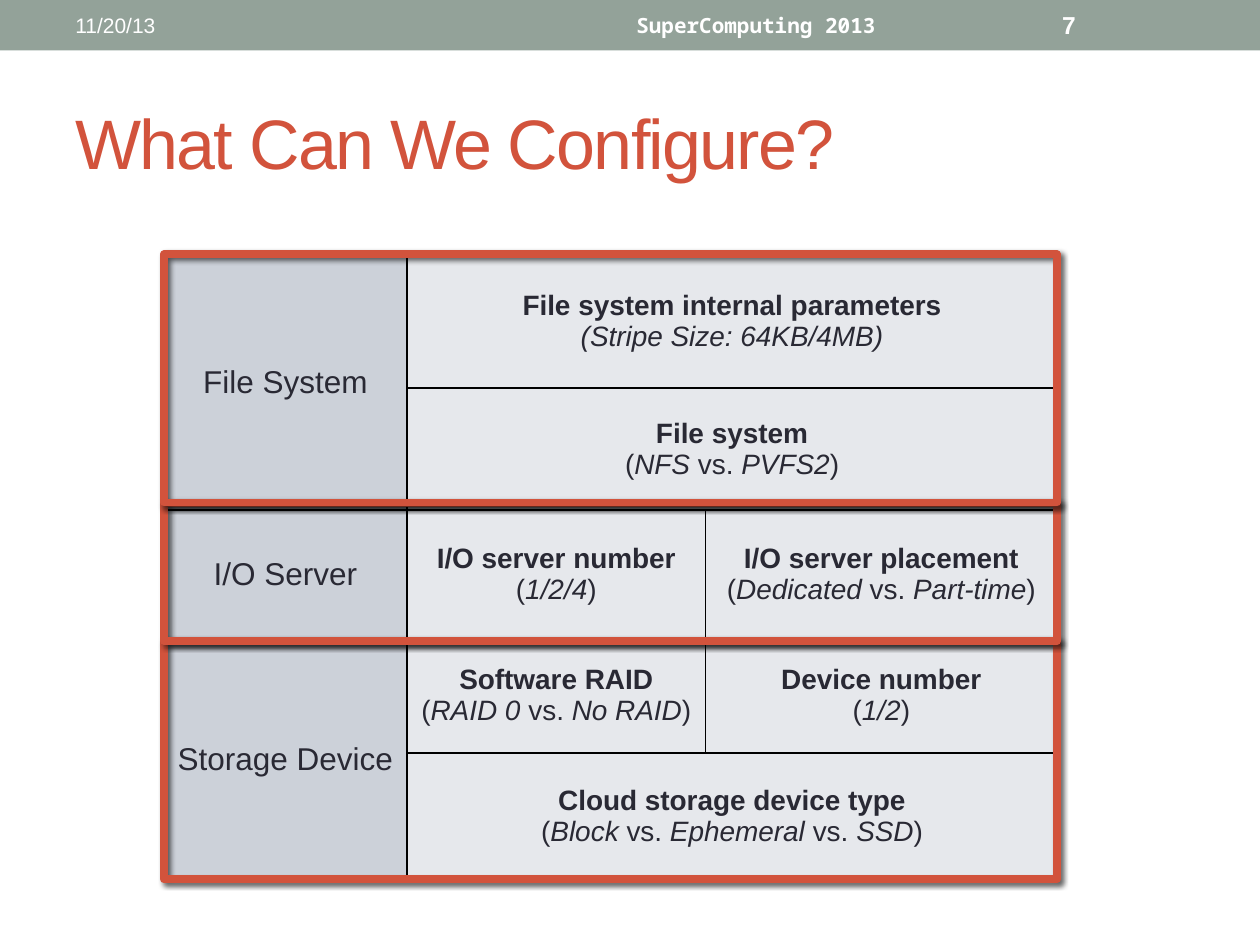
from dataclasses import dataclass
from itertools import accumulate

from lxml import etree
from pptx import Presentation
from pptx import util as u
from pptx.dml.color import RGBColor
from pptx.enum import shapes, text
from pptx.oxml import ns

Pt = u.Pt


@dataclass(frozen=True)
class Theme:
    sans: str = "Arial"
    mono: str = "Noto Sans Mono"
    bar: str = "93A299"
    accent: str = "D2533C"
    ink: str = "292934"
    white: str = "FFFFFF"
    rule: str = "000000"
    label_fill: str = "CCD1D9"
    option_fill: str = "E6E8EC"
    title_size: int = 40
    label_size: int = 18
    option_size: int = 16
    number_size: int = 14
    header_size: int = 12


T = Theme()
LEFT, TOP = 93.6, 145.4
COLS = [139, 170.6, 200.9]
ROWS = [76.3, 69.8, 73.4, 65.5, 72.7]
FRAME_HEIGHTS = [141.8, 79.2, 136.1]


def rgb(value):
    return RGBColor.from_string(value)


def add_run(p, content, size, color, font=T.sans, bold=False, italic=False):
    r = p.add_run()
    r.text = content
    r.font.name, r.font.size = font, Pt(size)
    r.font.bold, r.font.italic = bold, italic
    r.font.color.rgb = rgb(color)
    return r


def add_text(s, box, content, size, color, align=text.PP_ALIGN.LEFT, **style):
    tf = s.shapes.add_textbox(*map(Pt, box)).text_frame
    tf.word_wrap = True
    tf.vertical_anchor = text.MSO_ANCHOR.MIDDLE
    p = tf.paragraphs[0]
    p.alignment = align
    return add_run(p, content, size, color, **style)


def add_bar(s, width, height):
    sp = s.shapes.add_shape(shapes.MSO_SHAPE.RECTANGLE, 0, 0, Pt(width), Pt(height))
    sp.shadow.inherit = False
    sp.fill.solid()
    sp.fill.fore_color.rgb = rgb(T.bar)
    sp.line.fill.background()


def add_frame(s, top, height):
    sp = s.shapes.add_shape(shapes.MSO_SHAPE.RECTANGLE,
                            Pt(LEFT), Pt(top), Pt(sum(COLS)), Pt(height))
    sp.fill.background()
    sp.line.color.rgb = rgb(T.accent)
    sp.line.width = Pt(4.5)
    etree.SubElement(sp.line._get_or_add_ln(), ns.qn("a:round"))
    sp.shadow.inherit = False
    effects = sp._element.spPr.find(ns.qn("a:effectLst"))
    shadow = etree.SubElement(effects, ns.qn("a:outerShdw"), blurRad=str(Pt(3)),
                              dist=str(Pt(2)), dir="2700000", rotWithShape="0")
    color = etree.SubElement(shadow, ns.qn("a:srgbClr"), val=T.rule)
    etree.SubElement(color, ns.qn("a:alpha"), val="60000")


def add_borders(cell):
    tc_pr = cell._tc.get_or_add_tcPr()
    for i, side in enumerate(("lnL", "lnR", "lnT", "lnB")):
        ln = etree.Element(ns.qn("a:" + side), w=str(Pt(1)))
        fill = etree.SubElement(ln, ns.qn("a:solidFill"))
        etree.SubElement(fill, ns.qn("a:srgbClr"), val=T.rule)
        tc_pr.insert(i, ln)


def choices(*names):
    runs = [("(", False)]
    for i, name in enumerate(names):
        if i:
            runs.append((" vs. ", False))
        runs.append((name, True))
    return runs + [(")", False)]


def fill_label(cell, content):
    p = cell.text_frame.paragraphs[0]
    p.alignment = text.PP_ALIGN.CENTER
    add_run(p, content, T.label_size, T.ink)


def fill_option(cell, heading, detail):
    tf = cell.text_frame
    p = tf.paragraphs[0]
    add_run(p, heading, T.option_size, T.ink, bold=True)
    p.alignment = text.PP_ALIGN.CENTER
    p = tf.add_paragraph()
    p.alignment = text.PP_ALIGN.CENTER
    for content, italic in detail:
        add_run(p, content, T.option_size, T.ink, italic=italic)


def add_config_table(s, labels, options):
    table = s.shapes.add_table(len(ROWS), len(COLS), Pt(LEFT), Pt(TOP),
                               Pt(sum(COLS)), Pt(sum(ROWS))).table
    table.first_row = table.horz_banding = False
    for column, width in zip(table.columns, COLS):
        column.width = Pt(width)
    for row, height in zip(table.rows, ROWS):
        row.height = Pt(height)
        for i, cell in enumerate(row.cells):
            cell.fill.solid()
            cell.fill.fore_color.rgb = rgb(T.option_fill if i else T.label_fill)
            cell.vertical_anchor = text.MSO_ANCHOR.MIDDLE
            add_borders(cell)
    for first, last, label in labels:
        cell = table.cell(first, 0)
        if last > first:
            cell.merge(table.cell(last, 0))
        fill_label(cell, label)
    for r, row_options in enumerate(options):
        if len(row_options) == 1:
            table.cell(r, 1).merge(table.cell(r, 2))
        for c, option in enumerate(row_options, 1):
            fill_option(table.cell(r, c), *option)


def main():
    prs = Presentation()
    prs.slide_width, prs.slide_height = Pt(720), Pt(540)
    s = prs.slides.add_slide(prs.slide_layouts[6])

    add_bar(s, 720, 28.8)
    title = add_text(s, (36, 41.8, 648, 77.8), "What Can We Configure?",
                     T.title_size, T.accent)
    title.font._element.set("spc", "-100")
    add_text(s, (599.8, 1.4, 84.2, 25.9), "7", T.number_size, T.white, bold=True)

    labels = [(0, 1, "File System"), (2, 2, "I/O Server"), (3, 4, "Storage Device")]
    options = [
        [("File system internal parameters", [("(Stripe Size: 64KB/4MB)", True)])],
        [("File system", choices("NFS", "PVFS2"))],
        [("I/O server number", choices("1/2/4")),
         ("I/O server placement", choices("Dedicated", "Part-time"))],
        [("Software RAID", choices("RAID 0", "No RAID")),
         ("Device number", choices("1/2"))],
        [("Cloud storage device type", choices("Block", "Ephemeral", "SSD"))],
    ]
    add_config_table(s, labels, options)

    add_text(s, (270, 1.4, 324, 25.9), "SuperComputing 2013", T.header_size, T.white,
             align=text.PP_ALIGN.CENTER, font=T.mono, bold=True)
    add_text(s, (36, 1.4, 228.2, 25.9), "11/20/13", T.header_size, T.white)

    tops = accumulate(FRAME_HEIGHTS[:-1], initial=TOP)
    for top, height in reversed(list(zip(tops, FRAME_HEIGHTS))):
        add_frame(s, top, height)

    prs.save("out.pptx")


if __name__ == "__main__":
    main()
